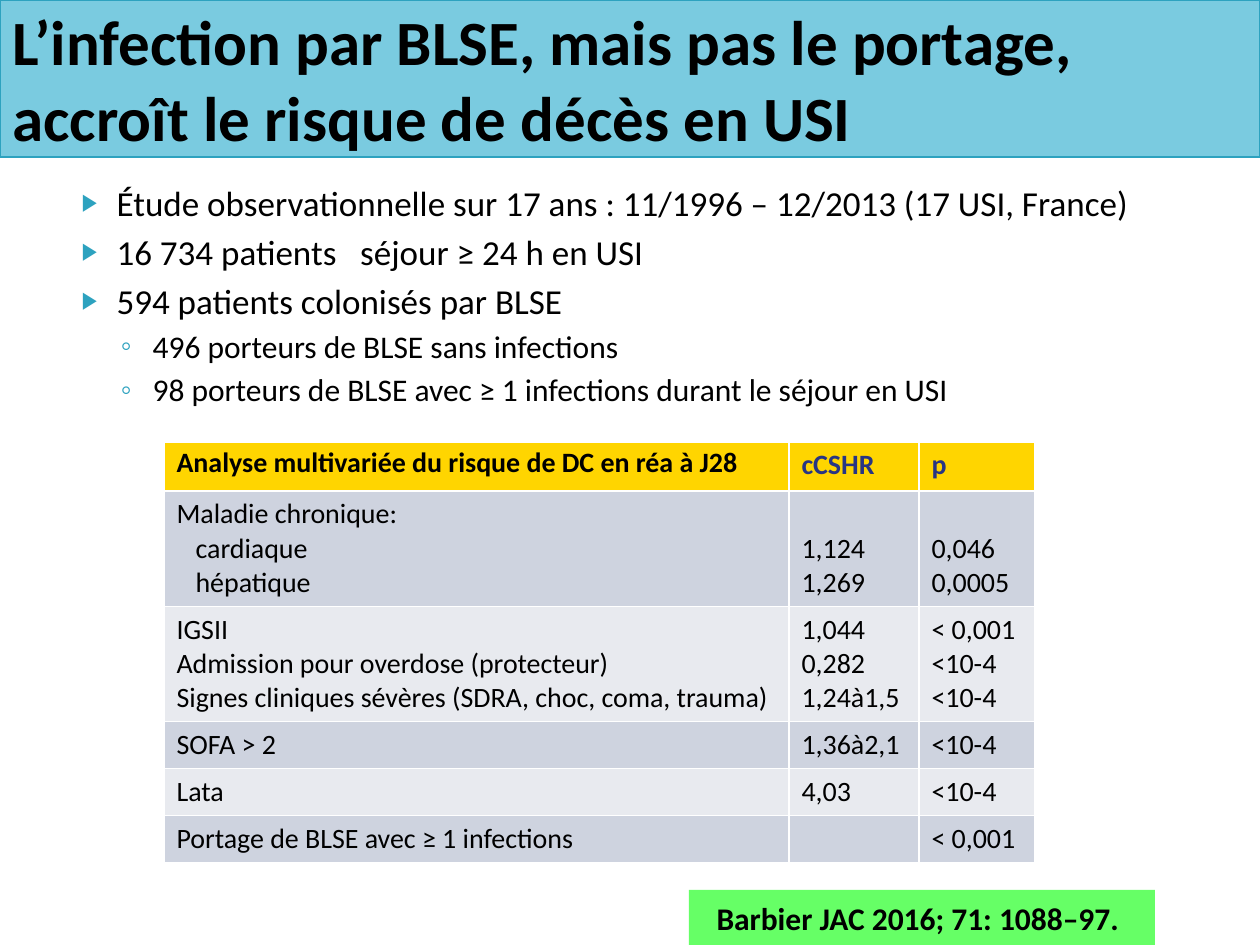
import dataclasses

import lxml.etree
import pptx
import pptx.dml.color
import pptx.enum.text
import pptx.oxml.ns
import pptx.util

EMU_PER_PX = 914400 / 126
FONT = "Calibri"
BLACK, WHITE, ACCENT = "000000", "FFFFFF", "2DA2BF"
LEFT = pptx.enum.text.PP_ALIGN.LEFT
TOP = pptx.enum.text.MSO_ANCHOR.TOP
MIDDLE = pptx.enum.text.MSO_ANCHOR.MIDDLE
BOTTOM = pptx.enum.text.MSO_ANCHOR.BOTTOM


@dataclasses.dataclass(frozen=True)
class Area:
    left: int
    top: int
    width: int
    height: int


@dataclasses.dataclass(frozen=True)
class BulletLevel:
    glyph: str
    glyph_percent: int
    size: int
    margin: int
    hanging: int
    before: float


@dataclasses.dataclass(frozen=True)
class Row:
    cells: tuple[str, str, str]
    height: int
    fill: str
    anchor: pptx.enum.text.MSO_ANCHOR = TOP


LEVELS = (
    BulletLevel("▶", 68, 20, 50, 35, 4),
    BulletLevel("◦", 100, 18, 86, 32, 3.2),
)
POINTS = (
    (0, "Étude observationnelle sur 17 ans : 11/1996 – 12/2013 (17 USI, France)"),
    (0, "16 734 patients   séjour ≥ 24 h en USI"),
    (0, "594 patients colonisés par BLSE"),
    (1, "496 porteurs de BLSE sans infections"),
    (1, "98 porteurs de BLSE avec ≥ 1 infections durant le séjour en USI"),
)
YELLOW, DARK_BAND, LIGHT_BAND = "FFD500", "CED3DF", "E8EAEF"
SUBITEMS = ("cardiaque", "hépatique")
COLUMN_WIDTHS = (625, 130, 116)
ROWS = (
    Row(("Analyse multivariée du risque de DC en réa à J28", "cCSHR", "p"), 49, YELLOW),
    Row(("Maladie chronique:\ncardiaque\nhépatique", "1,124\n1,269", "0,046\n0,0005"),
        114, DARK_BAND, BOTTOM),
    Row(("IGSII\nAdmission pour overdose (protecteur)\n"
         "Signes cliniques sévères (SDRA, choc, coma, trauma)",
         "1,044\n0,282\n1,24à1,5", "< 0,001\n<10-4\n<10-4"), 114, LIGHT_BAND),
    Row(("SOFA > 2", "1,36à2,1", "<10-4"), 46, DARK_BAND),
    Row(("Lata", "4,03", "<10-4"), 46, LIGHT_BAND),
    Row(("Portage de BLSE avec ≥ 1 infections", "", "< 0,001"), 46, DARK_BAND),
)


def px(length: int) -> int:
    return round(length * EMU_PER_PX)


def rgb(colour: str) -> pptx.dml.color.RGBColor:
    return pptx.dml.color.RGBColor.from_string(colour)


def add_element(parent, tag: str, **attributes: str):
    return lxml.etree.SubElement(parent, pptx.oxml.ns.qn(tag), attributes)


def set_fill(target, colour: str) -> None:
    target.fill.solid()
    target.fill.fore_color.rgb = rgb(colour)


def set_font(para, size: int, bold: bool = False, colour: str = BLACK) -> None:
    para.font.name = FONT
    para.font.size = pptx.util.Pt(size)
    para.font.bold = bold
    para.font.color.rgb = rgb(colour)


def place(box, area: Area, anchor) -> None:
    box.left, box.top = px(area.left), px(area.top)
    box.width, box.height = px(area.width), px(area.height)
    box.text_frame.word_wrap = True
    box.text_frame.auto_size = pptx.enum.text.MSO_AUTO_SIZE.NONE
    box.text_frame.vertical_anchor = anchor


def set_indent(para, margin: int, hanging: int = 0):
    properties = para._p.get_or_add_pPr()
    properties.set("marL", str(px(margin)))
    properties.set("indent", str(-px(hanging)))
    return properties


def fill_list(box) -> None:
    box.text_frame.text = "\n".join(text for _, text in POINTS)
    for para, (depth, _) in zip(box.text_frame.paragraphs, POINTS):
        level = LEVELS[depth]
        para.level = depth
        para.space_before = pptx.util.Pt(level.before)
        properties = set_indent(para, level.margin, level.hanging)
        add_element(add_element(properties, "a:buClr"), "a:srgbClr", val=ACCENT)
        add_element(properties, "a:buSzPct", val=str(level.glyph_percent * 1000))
        add_element(properties, "a:buChar", char=level.glyph)
        set_font(para, level.size)


def set_borders(cell, colour: str, points: float) -> None:
    """Draw all four sides; call before the fill is set."""
    properties = cell._tc.get_or_add_tcPr()
    for side in ("a:lnL", "a:lnR", "a:lnT", "a:lnB"):
        line = add_element(properties, side, w=str(pptx.util.Pt(points)))
        add_element(add_element(line, "a:solidFill"), "a:srgbClr", val=colour)


def fill_cell(cell, row: Row, column: int) -> None:
    header = row is ROWS[0]
    set_borders(cell, WHITE, 1)
    set_fill(cell, row.fill)
    cell.vertical_anchor = row.anchor
    cell.text = row.cells[column]
    for para in cell.text_frame.paragraphs:
        if para.text in SUBITEMS:
            set_indent(para, 19)
        if header and column == 0:
            para.line_spacing = 0.9
        set_font(para, 16, header, "283583" if header and column else BLACK)
        if not para.text:
            add_element(para._p, "a:endParaRPr", sz="1600")


def add_risk_table(slide, left: int, top: int) -> None:
    frame = slide.shapes.add_table(
        len(ROWS), len(COLUMN_WIDTHS), px(left), px(top),
        px(sum(COLUMN_WIDTHS)), px(sum(row.height for row in ROWS)))
    table = frame.table
    table.first_row = table.horz_banding = False
    for column, width in zip(table.columns, COLUMN_WIDTHS):
        column.width = px(width)
    for index, row in enumerate(ROWS):
        table.rows[index].height = px(row.height)
        for column in range(len(COLUMN_WIDTHS)):
            fill_cell(table.cell(index, column), row, column)


def main() -> None:
    deck = pptx.Presentation()
    deck.slide_width, deck.slide_height = px(1260), px(945)
    slide = deck.slides.add_slide(deck.slide_layouts.get_by_name("Two Content"))
    title, body, citation = slide.placeholders

    # Title band
    place(title, Area(0, 0, 1260, 157), MIDDLE)
    set_fill(title, "7ACBE0")
    title.line.color.rgb = rgb(ACCENT)
    title.line.width = pptx.util.Pt(0.75)
    title.text_frame.text = ("L’infection par BLSE, mais pas le portage, \v"
                             "accroît le risque de décès en USI")
    heading = title.text_frame.paragraphs[0]
    heading.alignment = LEFT
    set_font(heading, 36, bold=True)

    # Study population
    place(body, Area(54, 175, 1134, 563), TOP)
    fill_list(body)

    # Reference
    place(citation, Area(689, 890, 466, 55), MIDDLE)
    set_fill(citation, "66FF66")
    citation.text_frame.text = "Barbier JAC 2016; 71: 1088–97."
    reference = citation.text_frame.paragraphs[0]
    reference.space_before = pptx.util.Pt(0)
    add_element(set_indent(reference, 15), "a:buNone")
    set_font(reference, 18, bold=True)

    # Multivariate analysis
    add_risk_table(slide, 164, 442)

    deck.save("out.pptx")


if __name__ == "__main__":
    main()
